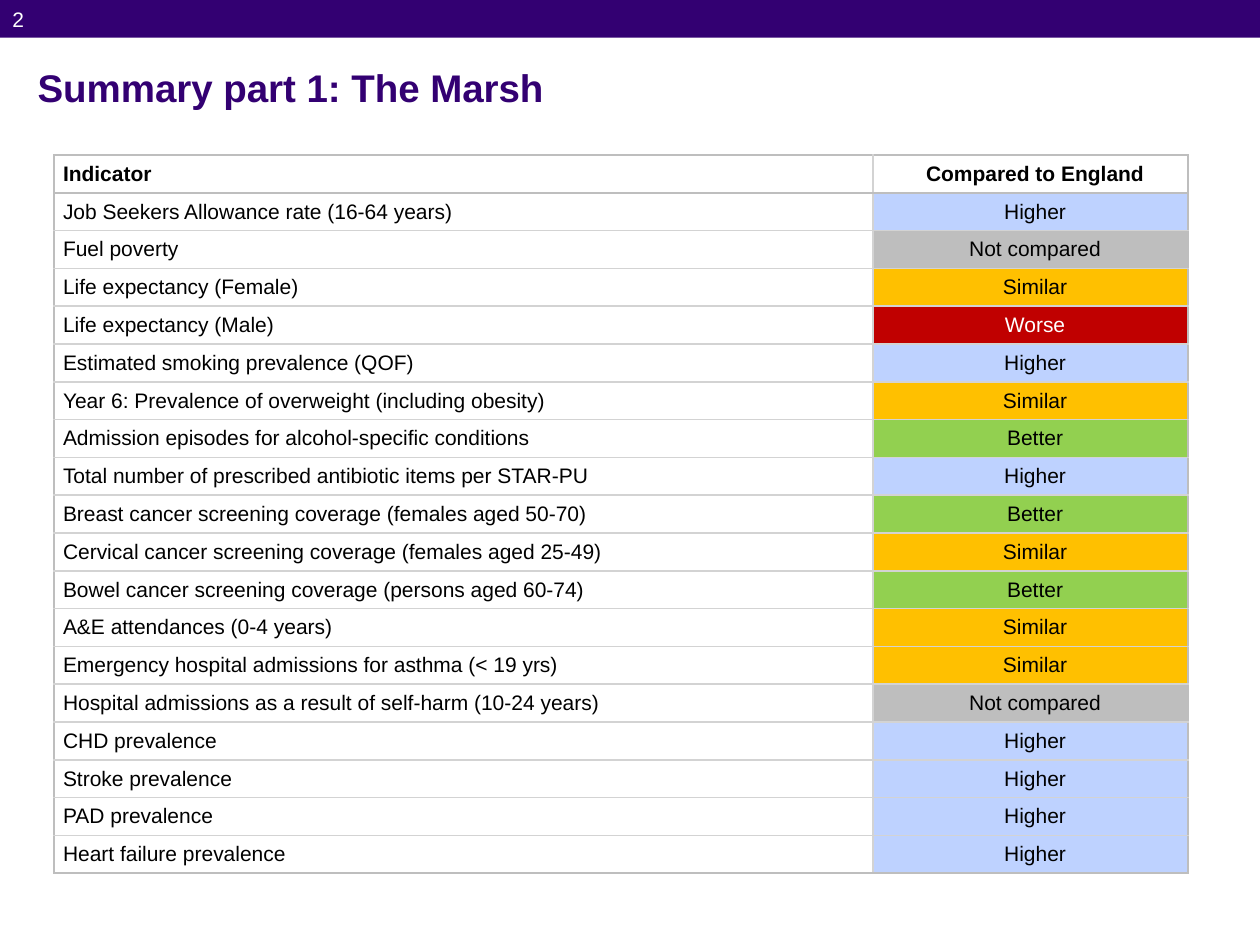
from lxml.etree import SubElement
from pptx import Presentation
from pptx.dml.color import RGBColor
from pptx.enum.shapes import MSO_SHAPE
from pptx.enum.text import MSO_ANCHOR, PP_ALIGN
from pptx.oxml.ns import qn
from pptx.util import Inches, Pt

PURPLE = RGBColor(0x33, 0x00, 0x72)
WHITE = RGBColor(0xFF, 0xFF, 0xFF)
BLACK = RGBColor(0x00, 0x00, 0x00)
BLUE = RGBColor(0xBE, 0xD2, 0xFF)
GREY = RGBColor(0xBE, 0xBE, 0xBE)
LIGHT_GREY = RGBColor(0xD3, 0xD3, 0xD3)
AMBER = RGBColor(0xFF, 0xC0, 0x00)
RED = RGBColor(0xC0, 0x00, 0x00)
GREEN = RGBColor(0x92, 0xD0, 0x50)

RATING_FILLS = {
    "Higher": BLUE,
    "Not compared": GREY,
    "Similar": AMBER,
    "Worse": RED,
    "Better": GREEN,
}

HEADER = ("Indicator", "Compared to England")
INDICATORS = [
    ("Job Seekers Allowance rate (16-64 years)", "Higher"),
    ("Fuel poverty", "Not compared"),
    ("Life expectancy (Female)", "Similar"),
    ("Life expectancy (Male)", "Worse"),
    ("Estimated smoking prevalence (QOF)", "Higher"),
    ("Year 6: Prevalence of overweight (including obesity)", "Similar"),
    ("Admission episodes for alcohol-specific conditions", "Better"),
    ("Total number of prescribed antibiotic items per STAR-PU", "Higher"),
    ("Breast cancer screening coverage (females aged 50-70)", "Better"),
    ("Cervical cancer screening coverage (females aged 25-49)", "Similar"),
    ("Bowel cancer screening coverage (persons aged 60-74)", "Better"),
    ("A&E attendances (0-4 years)", "Similar"),
    ("Emergency hospital admissions for asthma (< 19 yrs)", "Similar"),
    ("Hospital admissions as a result of self-harm (10-24 years)", "Not compared"),
    ("CHD prevalence", "Higher"),
    ("Stroke prevalence", "Higher"),
    ("PAD prevalence", "Higher"),
    ("Heart failure prevalence", "Higher"),
]


class SlideBuilder:
    font = "Arial"
    body_size = 12

    def __init__(self, slide):
        self.slide = slide

    def add_run(self, p, text, color, size=body_size, bold=False):
        r = p.add_run()
        r.text = text
        r.font.name = self.font
        r.font.size = Pt(size)
        r.font.bold = bold
        r.font.color.rgb = color

    def bar(self, left, top, width, height, color):
        sp = self.slide.shapes.add_shape(
            MSO_SHAPE.RECTANGLE, Inches(left), Inches(top), Inches(width), Inches(height))
        sp.shadow.inherit = False
        sp.fill.solid()
        sp.fill.fore_color.rgb = color
        sp.line.fill.background()

    def text(self, left, top, width, height, text, color, anchor=MSO_ANCHOR.TOP, **style):
        box = self.slide.shapes.add_textbox(
            Inches(left), Inches(top), Inches(width), Inches(height))
        tf = box.text_frame
        tf.word_wrap = True
        tf.vertical_anchor = anchor
        self.add_run(tf.paragraphs[0], text, color, **style)

    def table(self, left, top, widths, row_height, rows):
        last_row, last_col = len(rows) - 1, len(widths) - 1
        table = self.slide.shapes.add_table(
            len(rows), len(widths), Inches(left), Inches(top),
            Inches(sum(widths)), Inches(row_height * len(rows))).table
        table.first_row = table.horz_banding = False
        for column, width in zip(table.columns, widths):
            column.width = Inches(width)
        for i, row in enumerate(rows):
            table.rows[i].height = Inches(row_height)
            for j, text in enumerate(row):
                cell = table.cell(i, j)
                self.cell_text(cell, text, centred=j > 0, bold=i == 0)
                dark_sides = {"lnL": j == 0, "lnR": j == last_col,
                              "lnT": i <= 1, "lnB": i in (0, last_row)}
                for side, dark in dark_sides.items():
                    self.cell_border(cell, side, GREY if dark else LIGHT_GREY)
                if text in RATING_FILLS:
                    cell.fill.solid()
                    cell.fill.fore_color.rgb = RATING_FILLS[text]
                else:
                    cell.fill.background()

    def cell_text(self, cell, text, centred, bold):
        cell.margin_left = cell.margin_right = cell.margin_top = cell.margin_bottom = 0
        cell.vertical_anchor = MSO_ANCHOR.MIDDLE
        p = cell.text_frame.paragraphs[0]
        p.alignment = PP_ALIGN.CENTER if centred else PP_ALIGN.LEFT
        p.space_before = p.space_after = Pt(5)
        pPr = p._p.get_or_add_pPr()
        pPr.set("marL", str(Inches(0.07)))
        pPr.set("indent", "0")
        self.add_run(p, text, WHITE if text == "Worse" else BLACK, bold=bold)

    def cell_border(self, cell, side, color):
        ln = SubElement(cell._tc.get_or_add_tcPr(), qn(f"a:{side}"), w=str(Pt(1)))
        fill = SubElement(ln, qn("a:solidFill"))
        SubElement(fill, qn("a:srgbClr"), val=str(color))


def main():
    prs = Presentation()
    prs.slide_width, prs.slide_height = Inches(10), Inches(7.5)
    s = SlideBuilder(prs.slides.add_slide(prs.slide_layouts[6]))

    s.bar(0, 0, 10, 0.3, PURPLE)
    s.text(0.2, 0.47, 9.61, 0.45, "Summary part 1: The Marsh", PURPLE,
           anchor=MSO_ANCHOR.MIDDLE, size=22, bold=True)
    s.text(0, 0, 0.63, 0.63, "2", WHITE)
    s.table(0.43, 1.23, (6.5, 2.5), 0.3, [HEADER, *INDICATORS])

    prs.save("out.pptx")


if __name__ == "__main__":
    main()
